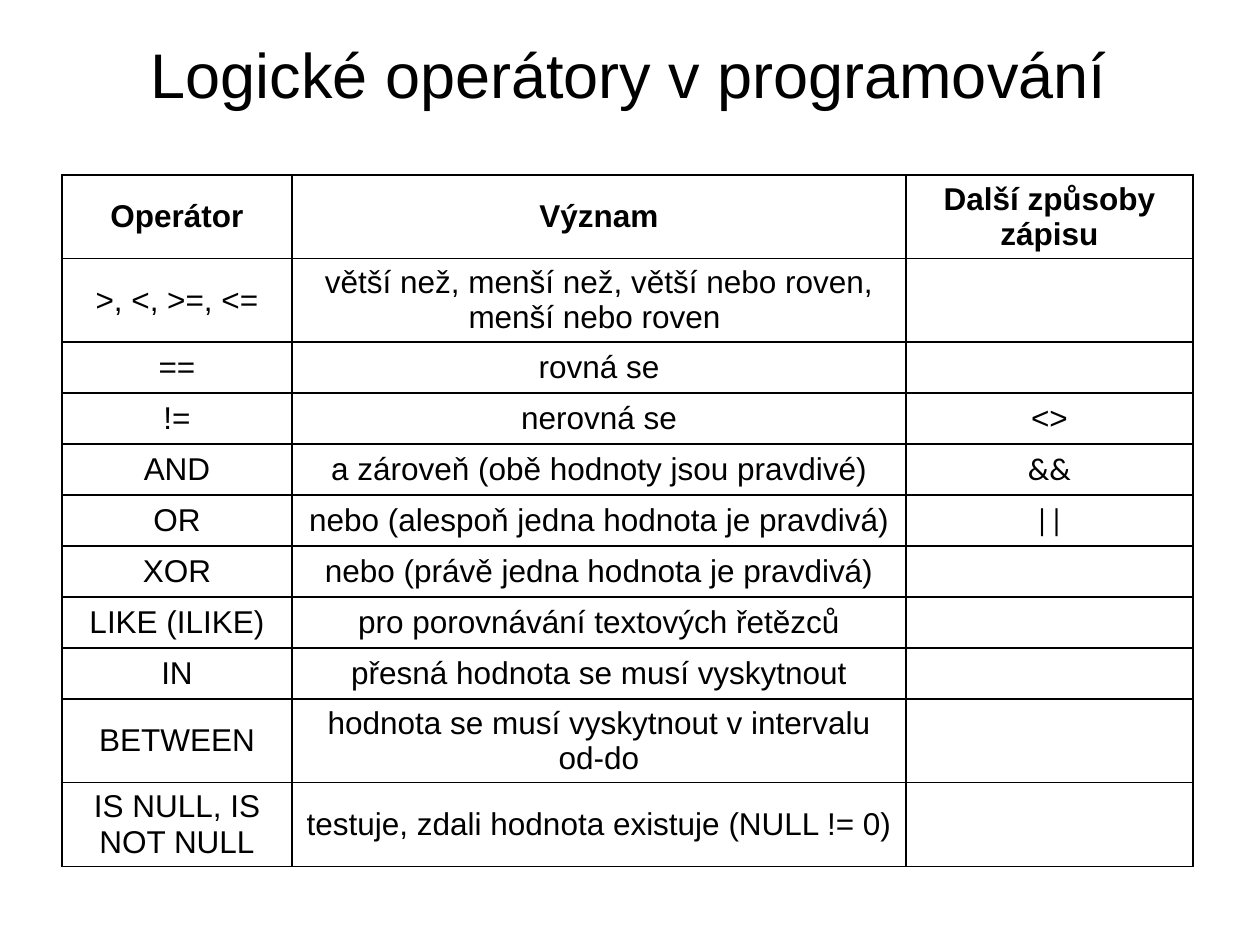
"""Build a slide with a table of logical operators in programming."""
from lxml import etree
from pptx import Presentation
from pptx.dml.color import RGBColor
from pptx.enum.text import MSO_ANCHOR, PP_ALIGN
from pptx.oxml import parse_xml
from pptx.oxml.ns import nsdecls
from pptx.util import Pt

CENTER = PP_ALIGN.CENTER
MIDDLE = MSO_ANCHOR.MIDDLE
PX = 914400 / 126
COLORS = {"ink": "000000", "paper": "FFFFFF"}
COLUMN_WIDTHS = [230, 614, 287]
ROW_HEIGHT = 51
CELL_MARGIN = 4
ROWS = [
    ("Operátor", "Význam", "Další způsoby zápisu"),
    (">, <, >=, <=", "větší než, menší než, větší nebo roven, menší nebo roven ", ""),
    ("==", "rovná se", ""),
    ("!=", "nerovná se", "<>"),
    ("AND", "a zároveň (obě hodnoty jsou pravdivé)", "&&"),
    ("OR", "nebo (alespoň jedna hodnota je pravdivá)", "||"),
    ("XOR", "nebo (právě jedna hodnota je pravdivá)", ""),
    ("LIKE (ILIKE)", "pro porovnávání textových řetězců", ""),
    ("IN", "přesná hodnota se musí vyskytnout", ""),
    ("BETWEEN", "hodnota se musí vyskytnout v intervalu od-do", ""),
    ("IS NULL, IS NOT NULL", "testuje, zdali hodnota existuje (NULL != 0)", ""),
]


def px(length):
    return round(length * PX)


def write(frame, text, size=18, font="Arial", bold=False, spacing=None):
    para = frame.paragraphs[0]
    para.alignment = CENTER
    para.line_spacing = spacing
    if text:
        span = para.add_run()
        span.text = text
        span.font.name = font
        span.font.size = Pt(size)
        span.font.bold = bold
        span.font.color.rgb = RGBColor.from_string(COLORS["ink"])


deck = Presentation()
deck.slide_width, deck.slide_height = px(1260), px(945)
page = deck.slides.add_slide(deck.slide_layouts[6])
page.background.fill.solid()
page.background.fill.fore_color.rgb = RGBColor.from_string(COLORS["paper"])

title = page.shapes.add_textbox(px(85), px(26), px(1087), px(105)).text_frame
title.word_wrap = True
title.vertical_anchor = MIDDLE
write(title, "Logické operátory v programování", size=36, spacing=0.9)

table = page.shapes.add_table(
    len(ROWS), len(COLUMN_WIDTHS), px(62), px(175),
    px(sum(COLUMN_WIDTHS)), px(ROW_HEIGHT * len(ROWS)),
).table
table.first_row = False
table.horz_banding = False
for column, width in zip(table.columns, COLUMN_WIDTHS):
    column.width = px(width)

for row_index, texts in enumerate(ROWS):
    table.rows[row_index].height = px(ROW_HEIGHT)
    for column_index, text in enumerate(texts):
        cell = table.cell(row_index, column_index)
        cell.vertical_anchor = MIDDLE
        cell.margin_top = cell.margin_bottom = px(CELL_MARGIN)
        cell.fill.background()
        font = "Calibri" if text in ("&&", "||") else "Arial"
        write(cell.text_frame, text, font=font, bold=row_index == 0)
        properties = cell.fill._xPr
        for position, side in enumerate(("lnL", "lnR", "lnT", "lnB")):
            border = parse_xml(f'<a:{side} {nsdecls("a")} w="{Pt(1)}"/>')
            fill = etree.SubElement(border, f"{{{border.nsmap['a']}}}solidFill")
            etree.SubElement(fill, f"{{{border.nsmap['a']}}}srgbClr", val=COLORS["ink"])
            properties.insert(position, border)

deck.save("out.pptx")
